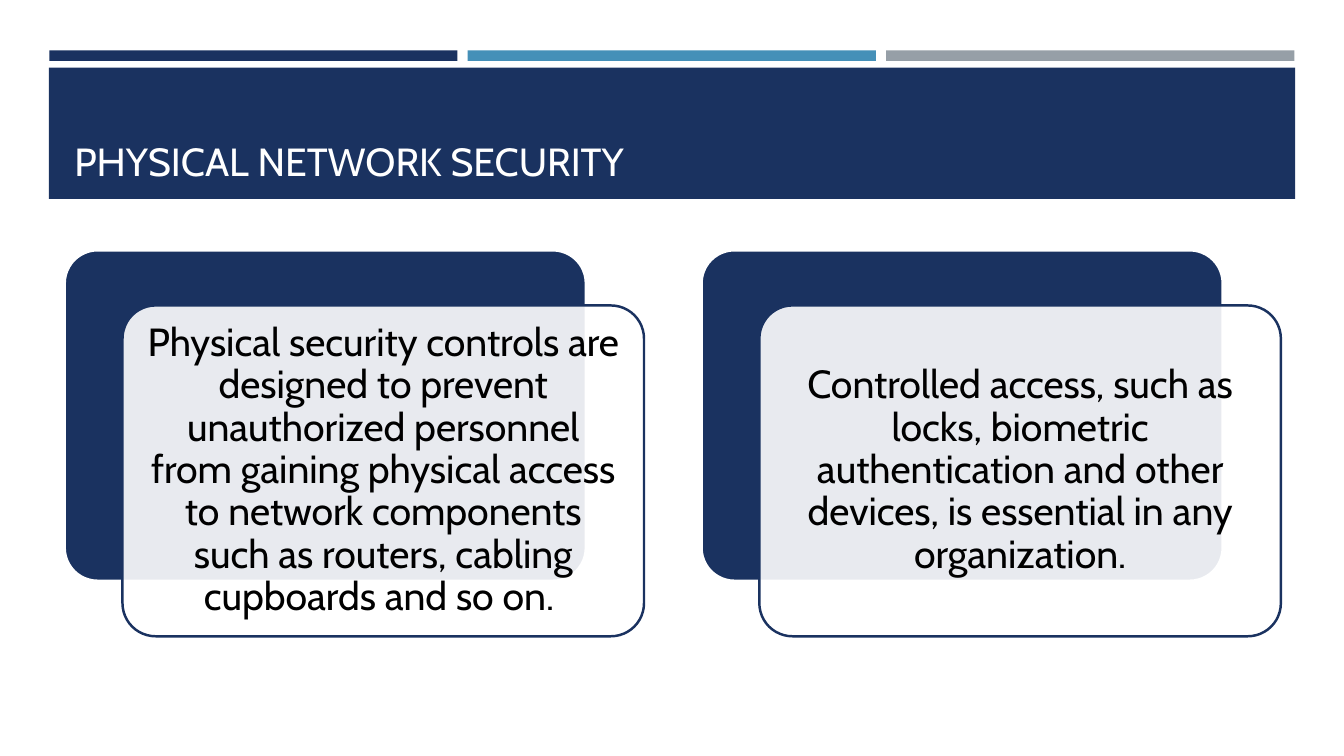
import pptx
import pptx.dml.color
import pptx.enum.shapes
import pptx.enum.text
import pptx.oxml
import pptx.oxml.ns
import pptx.util

Pt = pptx.util.Pt
Shape = pptx.enum.shapes.MSO_SHAPE
Anchor = pptx.enum.text.MSO_ANCHOR
Align = pptx.enum.text.PP_ALIGN

FONT = "Cabin"
COLORS = {
    "navy": "1A3260",
    "blue": "4590B8",
    "gray": "969FA7",
    "white": "FFFFFF",
    "black": "000000",
}
CARD_TEXTS = [
    "Physical security controls are designed to prevent unauthorized personnel "
    "from gaining physical access to network components such as routers, "
    "cabling cupboards and so on. ",
    "Controlled access, such as locks, biometric authentication and other "
    "devices, is essential in any organization.",
]
BAR_LEFT, BAR_STEP = 35.2, 298.9
CARD_LEFT, CARD_TOP, CARD_STEP = 46.1, 178.7, 454.9
CARD_WIDTH, CARD_HEIGHT = 372.5, 236.3
FRONT_SHIFT_X, FRONT_SHIFT_Y = 41.4, 39.5
TEXT_MARGIN = 6.9


def rgb(name):
    return pptx.dml.color.RGBColor.from_string(COLORS[name])


def add_block(slide, kind, box, fill, line=None, line_width=0):
    shape = slide.shapes.add_shape(kind, *map(Pt, box))
    shape.shadow.inherit = False
    shape.fill.solid()
    shape.fill.fore_color.rgb = rgb(fill)
    if line:
        shape.line.color.rgb = rgb(line)
        shape.line.width = Pt(line_width)
    else:
        shape.line.fill.background()
    return shape


def set_opacity(shape, percent):
    color = shape.fill._xPr.find(".//" + pptx.oxml.ns.qn("a:srgbClr"))
    namespace = pptx.oxml.ns.nsdecls("a")
    alpha = pptx.oxml.parse_xml(f'<a:alpha {namespace} val="{percent * 1000}"/>')
    color.append(alpha)


def add_text(slide, box, text, color, anchor, alignment, margins, line_spacing=1.0):
    frame = slide.shapes.add_textbox(*map(Pt, box)).text_frame
    frame.word_wrap = True
    frame.vertical_anchor = anchor
    frame.margin_left = frame.margin_right = Pt(margins[0])
    frame.margin_top = frame.margin_bottom = Pt(margins[1])
    paragraph = frame.paragraphs[0]
    paragraph.alignment = alignment
    paragraph.line_spacing = line_spacing
    run = paragraph.add_run()
    run.text = text
    run.font.name = FONT
    run.font.size = Pt(28)
    run.font.color.rgb = rgb(color)


def add_card(slide, left, text):
    front_left = left + FRONT_SHIFT_X
    front_top = CARD_TOP + FRONT_SHIFT_Y
    back = add_block(slide, Shape.ROUNDED_RECTANGLE,
                     (left, CARD_TOP, CARD_WIDTH, CARD_HEIGHT), "navy", "white", 2)
    front = add_block(slide, Shape.ROUNDED_RECTANGLE,
                      (front_left, front_top, CARD_WIDTH, CARD_HEIGHT),
                      "white", "navy", 1.75)
    set_opacity(front, 90)
    for shape in (back, front):
        shape.adjustments[0] = 0.1
    text_box = (front_left + TEXT_MARGIN, front_top + TEXT_MARGIN,
                CARD_WIDTH - 2 * TEXT_MARGIN, CARD_HEIGHT - 2 * TEXT_MARGIN)
    add_text(slide, text_box, text, "black", Anchor.MIDDLE, Align.CENTER,
             (8.4, 8.4), 0.9)


def main():
    presentation = pptx.Presentation()
    presentation.slide_width = Pt(960)
    presentation.slide_height = Pt(540)
    slide = presentation.slides.add_slide(presentation.slide_layouts[6])

    for index, color in enumerate(("navy", "blue", "gray")):
        add_block(slide, Shape.RECTANGLE,
                  (BAR_LEFT + index * BAR_STEP, 36, 291.6, 7.5), color)
    add_block(slide, Shape.RECTANGLE, (34.9, 48.3, 890.3, 93.8), "navy")
    add_text(slide, (46, 55.4, 868.3, 79.9), "PHYSICAL NETWORK SECURITY",
             "white", Anchor.BOTTOM, Align.LEFT, (7.2, 3.6))

    for index, text in enumerate(CARD_TEXTS):
        add_card(slide, CARD_LEFT + index * CARD_STEP, text)

    presentation.save("out.pptx")


if __name__ == "__main__":
    main()
